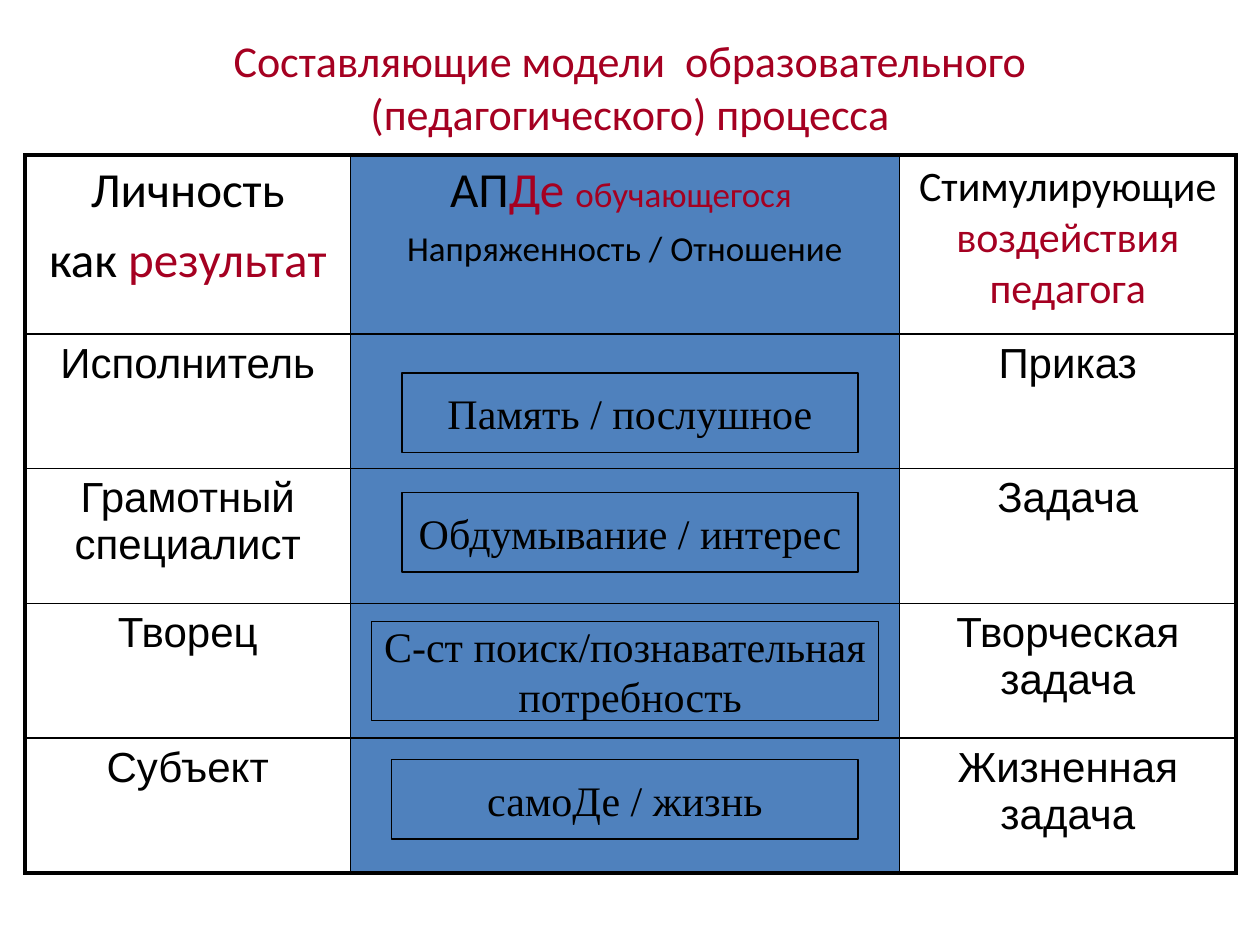
from lxml.etree import SubElement
from pptx import Presentation
from pptx.dml.color import RGBColor
from pptx.enum.shapes import MSO_SHAPE as Shape
from pptx.enum.text import MSO_ANCHOR as Anchor, MSO_AUTO_SIZE as AutoSize, PP_ALIGN as Align
from pptx.oxml.ns import qn
from pptx.util import Inches, Pt

BLACK, RED, BLUE = "000000", "A50021", "4F81BD"
THIN, THICK = 1, 2.25
TITLE = "Составляющие модели  образовательного (педагогического) процесса"
COLUMNS = [2.58, 4.36, 2.67]
ROWS = [1.42] + [1.07] * 4

# Each cell is a list of paragraphs, each paragraph a list of (text, size, colour) runs
HEADER = [
    [[("Личность", 28, BLACK)],
     [("как ", 28, BLACK), ("результат", 28, RED)]],
    [[("АП", 28, BLACK), ("Де ", 28, RED), ("обучающегося ", 20, RED)],
     [("Напряженность / Отношение", 20, BLACK)]],
    [[("Стимулирующие ", 24, BLACK), ("воздействия педагога", 24, RED)]],
]
LEVELS = [
    ("Исполнитель", "Приказ"),
    ("Грамотный специалист", "Задача"),
    ("Творец", "Творческая задача"),
    ("Субъект", "Жизненная задача"),
]
STATES = [
    (["Память / послушное"], (3.19, 2.96, 3.62, 0.63)),
    (["Обдумывание / интерес"], (3.19, 3.91, 3.62, 0.63)),
    (["С-ст поиск/познавательная", " потребность"], (2.95, 4.93, 4.02, 0.79)),
    (["самоДе / жизнь"], (3.11, 6.03, 3.7, 0.63)),
]


def rgb(color):
    return RGBColor.from_string(color)


def set_attrs(obj, values):
    for name, value in values.items():
        setattr(obj, name, value)


def write(tf, paragraphs, font, spacing=0):
    """Fill a text frame; spacing is the space before as a share of text size."""
    for i, runs in enumerate(paragraphs):
        p = tf.paragraphs[0] if i == 0 else tf.add_paragraph()
        set_attrs(p, {"alignment": Align.CENTER,
                      "space_before": Pt(spacing * runs[0][1])})
        for text, size, color in runs:
            r = p.add_run()
            r.text = text
            set_attrs(r.font, {"name": font, "size": Pt(size), "bold": False})
            r.font.color.rgb = rgb(color)


def set_borders(cell, widths):
    tc_pr = cell._tc.get_or_add_tcPr()
    for side, width in widths.items():
        ln = SubElement(tc_pr, qn(f"a:ln{side}"), w=str(Pt(width)))
        fill = SubElement(ln, qn("a:solidFill"))
        SubElement(fill, qn("a:srgbClr"), val=BLACK)


def add_title(slide):
    title = slide.shapes.title
    set_attrs(title, {"left": Inches(0.5), "top": Inches(0.3),
                      "width": Inches(9), "height": Inches(0.77)})
    set_attrs(title.text_frame, {"word_wrap": True, "auto_size": AutoSize.NONE,
                                 "vertical_anchor": Anchor.MIDDLE})
    write(title.text_frame, [[(TITLE, 25.2, RED)]], "Calibri")


def add_model_table(slide):
    frame = slide.shapes.add_table(len(ROWS), len(COLUMNS), Inches(0.2), Inches(1.23),
                                   Inches(sum(COLUMNS)), Inches(sum(ROWS)))
    table = frame.table
    set_attrs(table, {"first_row": False, "horz_banding": False})
    for column, width in zip(table.columns, COLUMNS):
        column.width = Inches(width)
    for row, height in zip(table.rows, ROWS):
        row.height = Inches(height)

    last_row, last_col = len(ROWS) - 1, len(COLUMNS) - 1
    for i in range(len(ROWS)):
        for j in range(len(COLUMNS)):
            cell = table.cell(i, j)
            set_borders(cell, {"L": THICK if j == 0 else THIN,
                               "R": THICK if j == last_col else THIN,
                               "T": THICK if i == 0 else THIN,
                               "B": THICK if i == last_row else THIN})
            if j == 1:
                cell.fill.solid()
                cell.fill.fore_color.rgb = rgb(BLUE)
            else:
                cell.fill.background()

    for j, paragraphs in enumerate(HEADER):
        write(table.cell(0, j).text_frame, paragraphs, "Calibri", 0.2)
    for i, (person, stimulus) in enumerate(LEVELS, 1):
        for j, text in ((0, person), (last_col, stimulus)):
            write(table.cell(i, j).text_frame, [[(text, 24, BLACK)]], "Arial", 0.2)


def add_state_box(slide, lines, box):
    sp = slide.shapes.add_shape(Shape.RECTANGLE, *map(Inches, box))
    sp.shadow.inherit = False
    sp.fill.solid()
    sp.fill.fore_color.rgb = rgb(BLUE)
    sp.line.color.rgb = rgb(BLACK)
    sp.line.width = Pt(0.75)
    set_attrs(sp.text_frame, {"word_wrap": False, "vertical_anchor": Anchor.MIDDLE})
    write(sp.text_frame, [[(line, 24, BLACK)] for line in lines], "Times New Roman")


def main():
    prs = Presentation()
    set_attrs(prs, {"slide_width": Inches(10), "slide_height": Inches(7.5)})
    slide = prs.slides.add_slide(prs.slide_layouts[5])
    add_title(slide)
    add_model_table(slide)
    for lines, box in STATES:
        add_state_box(slide, lines, box)
    prs.save("out.pptx")


if __name__ == "__main__":
    main()
